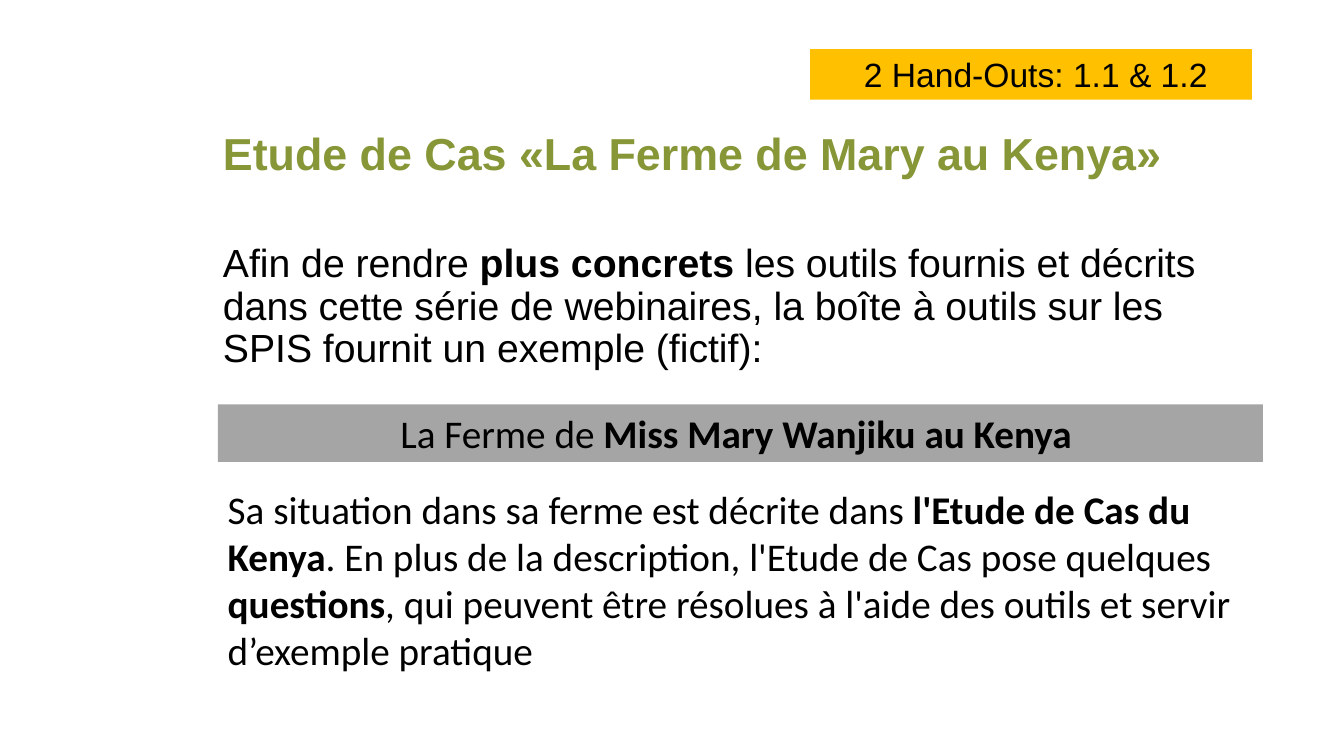
from dataclasses import dataclass
from typing import Optional

from pptx import Presentation
from pptx.dml.color import RGBColor
from pptx.enum.shapes import MSO_SHAPE
from pptx.enum.text import MSO_ANCHOR, MSO_AUTO_SIZE, PP_ALIGN
from pptx.util import Cm, Pt

BLACK = RGBColor(0x00, 0x00, 0x00)
OLIVE = RGBColor(0x87, 0x96, 0x37)
GREY = RGBColor(0xA5, 0xA5, 0xA5)
AMBER = RGBColor(0xFF, 0xC0, 0x00)
INSET = Cm(0.13)


@dataclass
class Run:
    text: str
    bold: bool = False


@dataclass
class Block:
    left: float
    top: float
    width: float
    height: float
    runs: list[Run]
    font: str = "Arial"
    size: float = 28
    color: RGBColor = BLACK
    fill: Optional[RGBColor] = None
    line_spacing: float = 1.0
    anchor: MSO_ANCHOR = MSO_ANCHOR.TOP
    grow: bool = False


BLOCKS = [
    # Title
    Block(5.49, 1.88, 26.06, 3.68,
          [Run("Etude de Cas «La Ferme de Mary au Kenya»", True)],
          size=32, color=OLIVE, line_spacing=1.2, anchor=MSO_ANCHOR.MIDDLE),
    # Introduction
    Block(5.49, 6.02, 26.06, 3.71,
          [Run("Afin de rendre "),
           Run("plus concrets ", True),
           Run("les outils fournis et décrits dans cette série de webinaires, "
               "la boîte à outils sur les SPIS fournit un exemple (fictif):")],
          line_spacing=0.9),
    # Farm name band
    Block(5.49, 10.19, 26.34, 1.45,
          [Run("La Ferme de "), Run("Miss Mary Wanjiku au Kenya ", True)],
          font="Calibri", fill=GREY, grow=True),
    # Case description
    Block(5.61, 12.09, 26.06, 5.05,
          [Run("Sa situation dans sa ferme est décrite dans "),
           Run("l'Etude de Cas du Kenya", True),
           Run(". En plus de la description, l'Etude de Cas pose quelques "),
           Run("questions", True),
           Run(", qui peuvent être résolues à l'aide des outils et servir "
               "d’exemple pratique")],
          font="Calibri", grow=True),
    # Hand-out label
    Block(20.42, 1.24, 11.13, 1.27, [Run(" 2 Hand-Outs: 1.1 & 1.2")],
          size=24, fill=AMBER, grow=True),
]


def draw_block(slide, block: Block) -> None:
    """Draw a filled, centred band or a plain left-aligned text box."""
    box = [Cm(value) for value in (block.left, block.top, block.width, block.height)]
    if block.fill is None:
        shape = slide.shapes.add_textbox(*box)
    else:
        shape = slide.shapes.add_shape(MSO_SHAPE.RECTANGLE, *box)
        shape.shadow.inherit = False
        shape.fill.solid()
        shape.fill.fore_color.rgb = block.fill
        shape.line.fill.background()

    frame = shape.text_frame
    frame.word_wrap = True
    frame.auto_size = MSO_AUTO_SIZE.SHAPE_TO_FIT_TEXT if block.grow else MSO_AUTO_SIZE.NONE
    frame.vertical_anchor = block.anchor
    frame.margin_left = frame.margin_right = INSET
    frame.margin_top = frame.margin_bottom = INSET

    paragraph = frame.paragraphs[0]
    paragraph.alignment = PP_ALIGN.CENTER if block.fill else PP_ALIGN.LEFT
    paragraph.line_spacing = block.line_spacing
    for part in block.runs:
        run = paragraph.add_run()
        run.text = part.text
        run.font.name = block.font
        run.font.size = Pt(block.size)
        run.font.bold = part.bold
        run.font.color.rgb = block.color


def main() -> None:
    presentation = Presentation()
    presentation.slide_width = Cm(33.87)
    presentation.slide_height = Cm(19.05)
    slide = presentation.slides.add_slide(presentation.slide_layouts[6])
    for block in BLOCKS:
        draw_block(slide, block)
    presentation.save("out.pptx")


if __name__ == "__main__":
    main()
